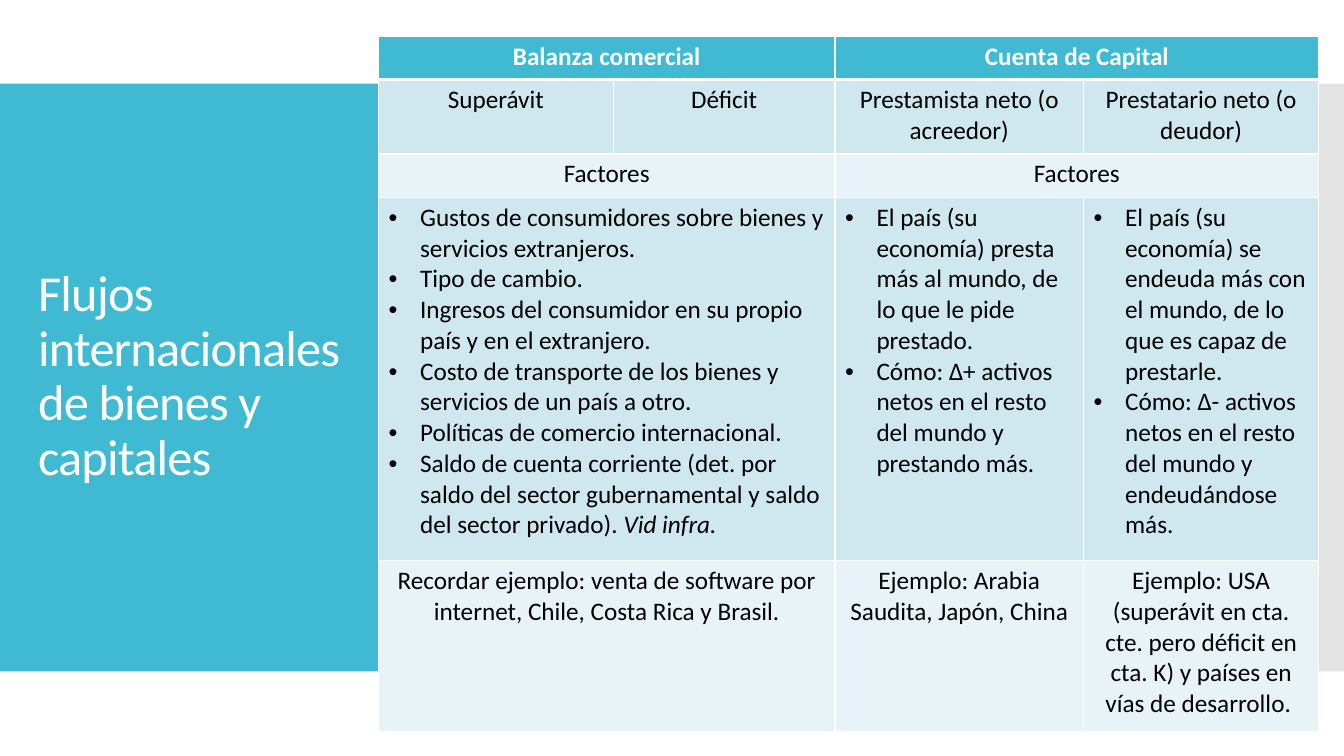
from lxml.etree import SubElement
from pptx import Presentation
from pptx.dml.color import RGBColor
from pptx.enum.shapes import MSO_SHAPE
from pptx.enum.text import MSO_ANCHOR, MSO_AUTO_SIZE, PP_ALIGN
from pptx.oxml.ns import qn
from pptx.util import Pt

COLORS = {
    "accent": "40BAD2",
    "side": "C8C8C8",
    "dark_band": "CFE7EE",
    "light_band": "E8F3F7",
    "white": "FFFFFF",
    "black": "000000",
}


def add_text(paragraph, text, size=18, color="black", bold=False, italic=False,
             font="Calibri", spacing=None):
    run = paragraph.add_run()
    run.text = text
    run.font.name = font
    run.font.size = Pt(size)
    run.font.bold = bold
    run.font.italic = italic
    run.font.color.rgb = RGBColor.from_string(COLORS[color])
    if spacing is not None:
        run.font._element.set("spc", str(int(spacing * 100)))


class SlideBuilder:
    bullet_indent = Pt(22.5)

    def __init__(self, slide):
        self.slide = slide

    def rectangle(self, left, top, width, height, color, opacity=100):
        shape = self.slide.shapes.add_shape(
            MSO_SHAPE.RECTANGLE, Pt(left), Pt(top), Pt(width), Pt(height))
        shape.shadow.inherit = False
        shape.line.fill.background()
        shape.fill.solid()
        shape.fill.fore_color.rgb = RGBColor.from_string(COLORS[color])
        if opacity < 100:
            fill_color = shape._element.spPr.find(f"{qn('a:solidFill')}/{qn('a:srgbClr')}")
            SubElement(fill_color, qn("a:alpha"), val=str(opacity * 1000))

    def title(self, text, left, top, width, height):
        title = self.slide.shapes.title
        # Bring the placeholder in front of the panels
        self.slide.shapes._spTree.append(title._element)
        title.left, title.top, title.width, title.height = map(Pt, (left, top, width, height))
        frame = title.text_frame
        frame.word_wrap = True
        frame.auto_size = MSO_AUTO_SIZE.NONE
        frame.vertical_anchor = MSO_ANCHOR.MIDDLE
        paragraph = frame.paragraphs[0]
        paragraph.alignment = PP_ALIGN.LEFT
        paragraph.line_spacing = 0.9
        add_text(paragraph, text, size=36, color="white", spacing=-0.6)

    def table(self, left, top, widths, heights):
        frame = self.slide.shapes.add_table(
            len(heights), len(widths), Pt(left), Pt(top), Pt(sum(widths)), Pt(sum(heights)))
        table = frame.table
        for column, width in zip(table.columns, widths):
            column.width = Pt(width)
        for row, height in zip(table.rows, heights):
            row.height = Pt(height)
        return table

    def cell_style(self, cell, fill, top_line=1, bottom_line=1):
        properties = cell._tc.get_or_add_tcPr()
        for side, width in (("L", 1), ("R", 1), ("T", top_line), ("B", bottom_line)):
            line = SubElement(properties, qn(f"a:ln{side}"), w=str(Pt(width)))
            solid = SubElement(line, qn("a:solidFill"))
            SubElement(solid, qn("a:srgbClr"), val=COLORS["white"])
        cell.fill.solid()
        cell.fill.fore_color.rgb = RGBColor.from_string(COLORS[fill])

    def centered(self, cell, text, **text_format):
        paragraph = cell.text_frame.paragraphs[0]
        paragraph.alignment = PP_ALIGN.CENTER
        add_text(paragraph, text, **text_format)

    def bullets(self, cell, items):
        """Each item is a string, or a pair of plain and italic text."""
        frame = cell.text_frame
        for index, item in enumerate(items):
            paragraph = frame.add_paragraph() if index else frame.paragraphs[0]
            properties = paragraph._p.get_or_add_pPr()
            properties.set("marL", str(self.bullet_indent))
            properties.set("indent", str(-self.bullet_indent))
            SubElement(properties, qn("a:buFont"), typeface="Arial")
            SubElement(properties, qn("a:buChar"), char="•")
            plain, italic = (item, "") if isinstance(item, str) else item
            add_text(paragraph, plain)
            if italic:
                add_text(paragraph, italic, italic=True)


# None marks a cell covered by the one to its left; a list becomes bullets
ROWS = [
    ["Balanza comercial", None, "Cuenta de Capital", None],
    ["Superávit", "Déficit", "Prestamista neto (o acreedor)", "Prestatario neto (o deudor)"],
    ["Factores", None, "Factores", None],
    [
        [
            "Gustos de consumidores sobre bienes y servicios extranjeros.",
            "Tipo de cambio.",
            "Ingresos del consumidor en su propio país y en el extranjero.",
            "Costo de transporte de los bienes y servicios de un país a otro.",
            "Políticas de comercio internacional.",
            ("Saldo de cuenta corriente (det. por saldo del sector gubernamental "
             "y saldo del sector privado). ", "Vid infra."),
        ],
        None,
        [
            "El país (su economía) presta más al mundo, de lo que le pide prestado.",
            "Cómo: Δ+ activos netos en el resto del mundo y prestando más.",
        ],
        [
            "El país (su economía) se endeuda más con el mundo, de lo que es capaz de prestarle.",
            "Cómo: Δ- activos netos en el resto del mundo y endeudándose más.",
        ],
    ],
    [
        "Recordar ejemplo: venta de software por internet, Chile, Costa Rica y Brasil.",
        None,
        "Ejemplo: Arabia Saudita, Japón, China",
        "Ejemplo: USA (superávit en cta. cte. pero déficit en cta. K) "
        "y países en vías de desarrollo. ",
    ],
]
ROW_FILLS = ["accent", "dark_band", "light_band", "dark_band", "light_band"]


def main():
    presentation = Presentation()
    presentation.slide_width, presentation.slide_height = Pt(960), Pt(540)
    builder = SlideBuilder(presentation.slides.add_slide(presentation.slide_layouts[5]))

    # Side panels and title
    builder.rectangle(0, 59.8, 271.4, 419.8, "accent")
    builder.rectangle(930, 59.8, 30, 419.8, "side", opacity=50)
    builder.title("Flujos internacionales de bienes y capitales", 20, 88.5, 239, 362)

    # Table of the trade balance and the capital account
    table = builder.table(270.4, 26, [167.6, 158.4, 177.6, 168], [30.8, 53.2, 31, 259.4, 122.4])
    for row, contents in enumerate(ROWS):
        header = row == 0
        for column, content in enumerate(contents):
            cell = table.cell(row, column)
            builder.cell_style(cell, ROW_FILLS[row], top_line=3 if row == 1 else 1,
                               bottom_line=3 if header else 1)
            if content is None:
                table.cell(row, column - 1).merge(cell)
            elif isinstance(content, list):
                builder.bullets(cell, content)
            else:
                builder.centered(cell, content, bold=header,
                                 color="white" if header else "black")

    presentation.save("out.pptx")


if __name__ == "__main__":
    main()
